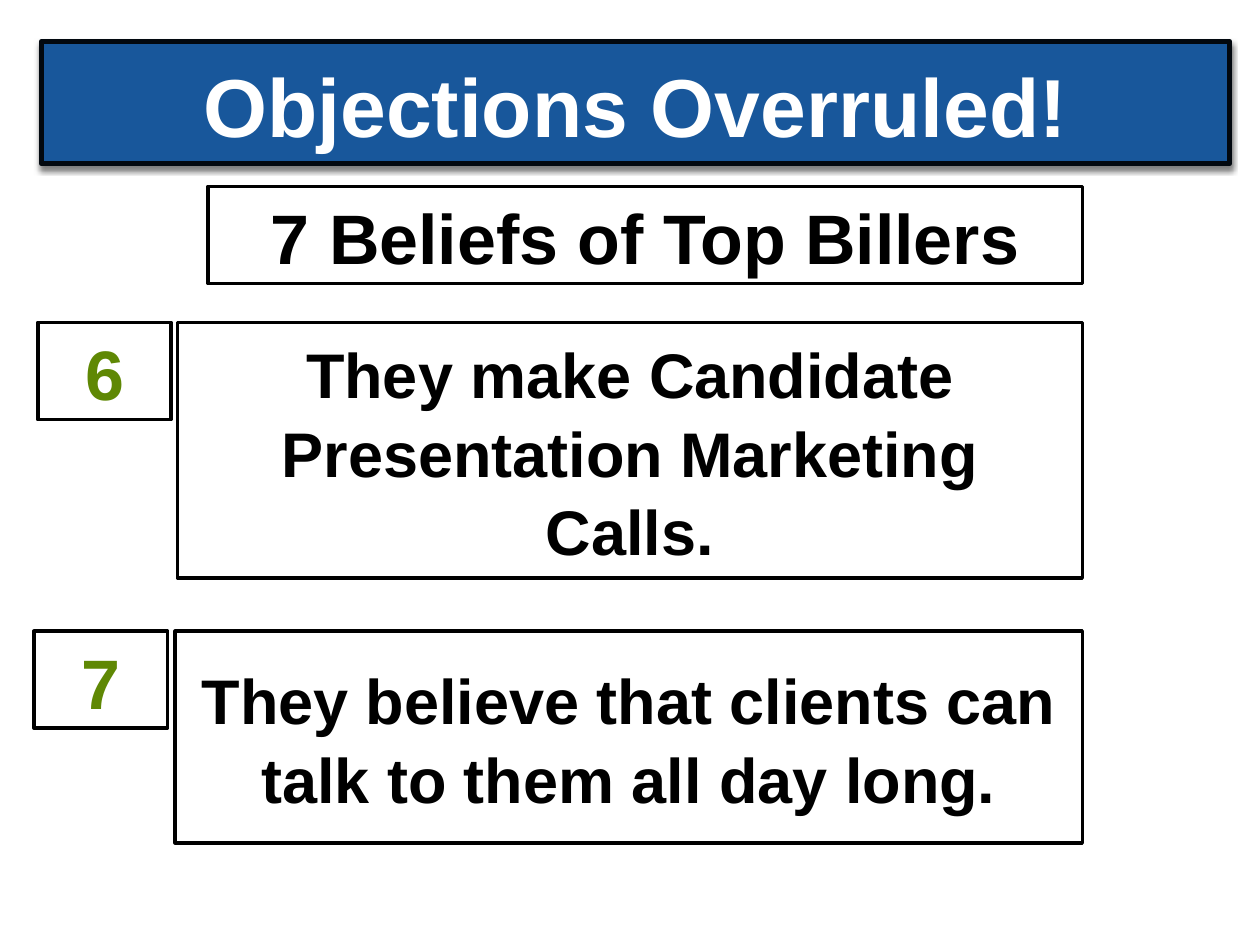
from dataclasses import dataclass

from lxml.etree import SubElement
from pptx import Presentation
from pptx.dml.color import RGBColor
from pptx.enum.shapes import MSO_SHAPE
from pptx.enum.text import MSO_ANCHOR, PP_ALIGN
from pptx.oxml.ns import qn
from pptx.shapes.autoshape import Shape
from pptx.slide import Slide
from pptx.util import Inches, Pt

WHITE = RGBColor(0xFF, 0xFF, 0xFF)
BLACK = RGBColor(0x00, 0x00, 0x00)
BLUE = RGBColor(0x18, 0x57, 0x9B)
NAVY = RGBColor(0x02, 0x08, 0x0F)
GREEN = RGBColor(0x5F, 0x88, 0x04)

FONT = "Arial"
BADGE_WIDTH, BADGE_HEIGHT = 1.06, 0.77


@dataclass
class Box:
    """A bordered rectangle with centred bold text; lengths in inches."""
    text: str
    left: float
    top: float
    width: float
    height: float
    size: float
    color: RGBColor = BLACK
    fill: RGBColor = WHITE
    border: RGBColor = BLACK
    border_width: float = 2


@dataclass
class Belief:
    number: int
    text: str
    badge_left: float
    left: float
    top: float
    width: float
    height: float


TITLE = Box("Objections Overruled!", 0.33, 0.33, 9.43, 0.97, 47, WHITE, BLUE, NAVY, 3)
SUBTITLE = Box("7 Beliefs of Top Billers", 1.65, 1.48, 6.94, 0.77, 40)
BELIEFS = [
    Belief(6, "They make Candidate Presentation Marketing Calls.",
           0.3, 1.41, 2.56, 7.18, 2.03),
    Belief(7, "They believe that clients can talk to them all day long.",
           0.27, 1.39, 5.01, 7.2, 1.68),
]


def draw_box(slide: Slide, box: Box) -> Shape:
    shape = slide.shapes.add_shape(
        MSO_SHAPE.RECTANGLE, Inches(box.left), Inches(box.top),
        Inches(box.width), Inches(box.height))
    shape.shadow.inherit = False
    shape.fill.solid()
    shape.fill.fore_color.rgb = box.fill
    shape.line.color.rgb = box.border
    shape.line.width = Pt(box.border_width)

    text_frame = shape.text_frame
    text_frame.text = box.text
    text_frame.word_wrap = True
    text_frame.vertical_anchor = MSO_ANCHOR.MIDDLE
    text_frame.margin_left = text_frame.margin_right = Inches(0.15)
    paragraph = text_frame.paragraphs[0]
    paragraph.alignment = PP_ALIGN.CENTER
    paragraph.line_spacing = 1.04
    font = paragraph.runs[0].font
    font.name = FONT
    font.size = Pt(box.size)
    font.bold = True
    font.color.rgb = box.color
    return shape


def add_drop_shadow(shape: Shape) -> None:
    """Cast a soft, half-transparent black shadow straight down."""
    effects = shape.element.spPr.find(qn("a:effectLst"))
    shadow = SubElement(effects, qn("a:outerShdw"), blurRad=str(Pt(3)),
                        dist=str(Pt(2)), dir="5400000", rotWithShape="0")
    color = SubElement(shadow, qn("a:srgbClr"), val=str(BLACK))
    SubElement(color, qn("a:alpha"), val="50000")


def draw_belief(slide: Slide, belief: Belief) -> None:
    draw_box(slide, Box(belief.text, belief.left, belief.top,
                        belief.width, belief.height, 36))
    draw_box(slide, Box(str(belief.number), belief.badge_left, belief.top,
                        BADGE_WIDTH, BADGE_HEIGHT, 40, GREEN))


def main() -> None:
    presentation = Presentation()
    presentation.slide_width = Inches(10)
    presentation.slide_height = Inches(7.5)
    slide = presentation.slides.add_slide(presentation.slide_layouts[6])

    add_drop_shadow(draw_box(slide, TITLE))
    draw_box(slide, SUBTITLE)
    for belief in BELIEFS:
        draw_belief(slide, belief)

    presentation.save("out.pptx")


if __name__ == "__main__":
    main()
